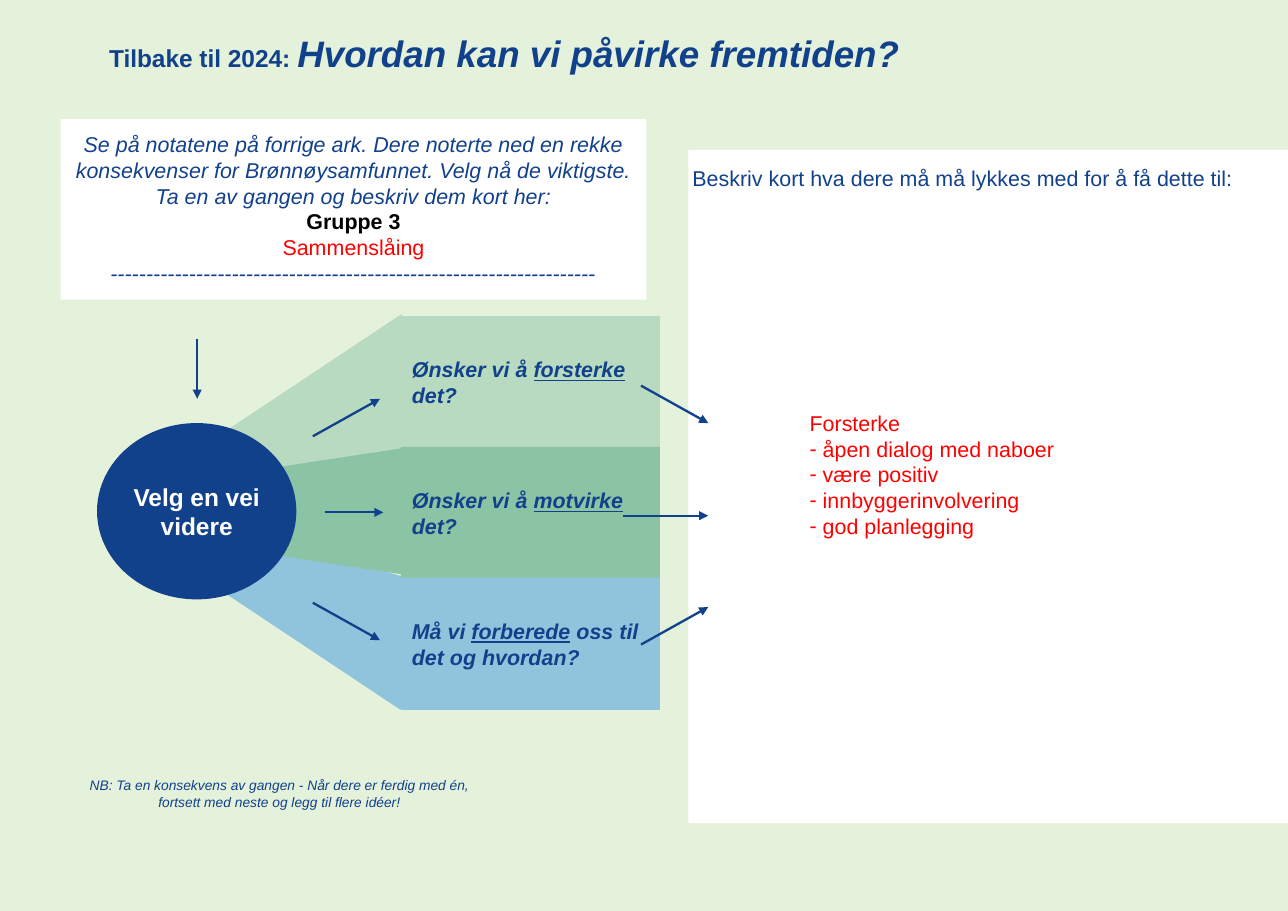
"""Build the slide on how the group can influence the future."""
import pptx
import pptx.chart
import pptx.dml.color
import pptx.enum.shapes
import pptx.enum.text
import pptx.util
from dataclasses import dataclass
from lxml import etree

Pt = pptx.util.Pt
SHAPE = pptx.enum.shapes.MSO_SHAPE
ALIGN = pptx.enum.text.PP_ALIGN
ANCHOR = pptx.enum.text.MSO_ANCHOR


@dataclass(frozen=True)
class Theme:
    font: str = "Arial"
    background: str = "E4F1DB"
    navy: str = "12418B"
    white: str = "FFFFFF"
    black: str = "000000"
    red: str = "FF0000"
    mint: str = "B8DAC0"
    green: str = "8BC3A5"
    blue: str = "90C4DD"
    note: int = 9
    body: int = 14
    label: int = 16
    title: int = 24
    line: float = 1.5


THEME = Theme()
PAGE = (841.9, 595.3)
TITLE = ("Tilbake til 2024: ", "Hvordan kan vi påvirke fremtiden?")
INTRO = [
    ("Se på notatene på forrige ark. Dere noterte ned en rekke konsekvenser for "
     "Brønnøysamfunnet. Velg nå de viktigste. Ta en av gangen og beskriv dem kort her:",
     dict(italic=True)),
    ("Gruppe 3", dict(color=THEME.black, bold=True)),
    ("Sammenslåing", dict(color=THEME.red)),
    ("-" * 68, dict(italic=True)),
]
HUB = "Velg en vei videre"
QUESTIONS = [
    (("Ønsker vi å ", "forsterke", " det?"), THEME.mint),
    (("Ønsker vi å ", "motvirke", " det?"), THEME.green),
    (("Må vi ", "forberede", " oss til det og hvordan?"), THEME.blue),
]
PROMPT = "Beskriv kort hva dere må må lykkes med for å få dette til:"
ANSWER = "Forsterke"
ANSWER_POINTS = ["åpen dialog med naboer", "være positiv", "innbyggerinvolvering", "god planlegging"]
NOTE = ["NB: Ta en konsekvens av gangen - Når dere er ferdig med én,",
        "fortsett med neste og legg til flere idéer!"]

PANEL = (450, 98, 391.9, 440)
HUB_BOX = (63.4, 276.5, 130.3, 115.2)
QUESTION_BOX = (262.1, 206.6, 169.2, 86.4)
QUESTION_STEP = 85.5
WEDGES = [
    ((175.7, 329, 85, 135.4), 294.9, THEME.blue),
    ((175.7, 204.5, 85.7, 136.8), 245.1, THEME.mint),
    ((160.6, 265.7, 85, 136.8), 270, THEME.green),
]
STRAIGHT_ARROWS = [(128.9, 221.8, 128.9, 260.6), (212.4, 334.8, 250.6, 334.8), (407.5, 337, 463, 337)]
ARROW_FANS = [(204.5, 248.4, 339.5, 54.4, 78.9), (419, 463, 336.6, 84.6, 60.1)]


def rgb(value):
    return pptx.dml.color.RGBColor.from_string(value)


def style(font, size=THEME.body, color=THEME.navy, bold=False, italic=False):
    font.name, font.size, font.bold, font.italic = THEME.font, Pt(size), bold, italic
    font.color.rgb = rgb(color)


def place(sp, box):
    sp.left, sp.top, sp.width, sp.height = map(Pt, box)


def frame(sp, inset, anchor=ANCHOR.TOP):
    tf = sp.text_frame
    tf.word_wrap, tf.vertical_anchor = True, anchor
    tf.auto_size = pptx.enum.text.MSO_AUTO_SIZE.NONE
    tf.margin_left = tf.margin_top = tf.margin_right = tf.margin_bottom = Pt(inset)
    return tf


def write(tf, lines, align=ALIGN.CENTER):
    for i, (runs, look) in enumerate(lines):
        p = tf.add_paragraph() if i else tf.paragraphs[0]
        p.alignment, p.space_before = align, Pt(0)
        style(p.font, **look)
        for j, text in enumerate([runs] if isinstance(runs, str) else runs):
            r = p.add_run()
            r.text = text
            if j == 1:
                r.font.underline = True


def shape(s, kind, box, color):
    sp = s.shapes.add_shape(kind, *map(Pt, box))
    sp.shadow.inherit = False
    sp.fill.solid()
    sp.fill.fore_color.rgb = rgb(color)
    sp.line.fill.background()
    return sp


def arrow(s, *ends):
    c = s.shapes.add_connector(pptx.enum.shapes.MSO_CONNECTOR.STRAIGHT, *map(Pt, ends))
    c.line.color.rgb, c.line.width = rgb(THEME.navy), Pt(THEME.line)
    ns = pptx.oxml.ns.qn
    etree.SubElement(c.line._get_or_add_ln(), ns("a:tailEnd"), type="triangle")
    etree.SubElement(c._element.spPr, ns("a:effectLst"))


def bullet(p, char, left=0, hang=0):
    pPr = p._p.get_or_add_pPr()
    pPr.set("marL", str(Pt(left)))
    pPr.set("indent", str(Pt(-hang)))
    mark = pptx.oxml.parse_xml(
        f'<a:bu{"Char" if char else "None"} {pptx.oxml.ns.nsdecls("a")}/>')
    if char:
        mark.set("char", char)
    pPr.insert_element_before(mark, "a:tabLst", "a:defRPr", "a:extLst")


def add_title(s):
    sp = s.shapes.title
    place(sp, (63.4, 12.2, 616.3, 45.4))
    p = frame(sp, 7.9).paragraphs[0]
    p.alignment = ALIGN.LEFT
    for text, size, italic in zip(TITLE, (THEME.label, THEME.title), (False, True)):
        r = p.add_run()
        r.text = text
        style(r.font, size, bold=True, italic=italic)


def add_answers(s):
    sp = s.placeholders[1]
    place(sp, PANEL)
    sp.fill.solid()
    sp.fill.fore_color.rgb = rgb(THEME.white)
    tf = frame(sp, 7.2, ANCHOR.MIDDLE)
    tf.margin_left, tf.margin_bottom = Pt(79.2), Pt(23.3)
    write(tf, [(text, dict(color=THEME.red)) for text in [ANSWER, *ANSWER_POINTS]], ALIGN.LEFT)
    bullet(tf.paragraphs[0], None)
    for p in tf.paragraphs[1:]:
        bullet(p, "-", 8.55, 8.55)


def add_paths(s):
    for box, angle, color in WEDGES:
        sp = shape(s, SHAPE.TRAPEZOID, box, color)
        sp.adjustments[0], sp.rotation = 0.244, angle
    sp = shape(s, SHAPE.OVAL, HUB_BOX, THEME.navy)
    write(frame(sp, 0, ANCHOR.MIDDLE), [(HUB, dict(size=THEME.label, color=THEME.white, bold=True))])
    left, top, width, height = QUESTION_BOX
    for i, (runs, color) in enumerate(QUESTIONS):
        sp = shape(s, SHAPE.RECTANGLE, (left, top + i * QUESTION_STEP, width, height), color)
        write(frame(sp, 7.2, ANCHOR.MIDDLE), [(runs, dict(bold=True, italic=True))], ALIGN.LEFT)


def add_arrows(s):
    for ends in STRAIGHT_ARROWS:
        arrow(s, *ends)
    for x1, x2, middle, start, end in ARROW_FANS:
        for side in (-1, 1):
            arrow(s, x1, middle + side * start, x2, middle + side * end)


def main():
    prs = pptx.Presentation()
    prs.slide_width, prs.slide_height = map(Pt, PAGE)
    s = prs.slides.add_slide(prs.slide_layouts[1])
    s.background.fill.solid()
    s.background.fill.fore_color.rgb = rgb(THEME.background)
    add_title(s)
    add_answers(s)
    add_paths(s)
    sp = s.shapes.add_textbox(*map(Pt, (433.5, 100.8, 391.7, 31.7)))
    write(frame(sp, 7.2), [(PROMPT, {})])
    add_arrows(s)
    sp = s.shapes.add_textbox(*map(Pt, (47.2, 499.7, 270.7, 38.2)))
    write(frame(sp, 7.9), [(text, dict(size=THEME.note, italic=True)) for text in NOTE])
    sp = shape(s, SHAPE.RECTANGLE, (39.6, 77.8, 383, 118.1), THEME.white)
    write(frame(sp, 7.9), INTRO)
    prs.save("out.pptx")


if __name__ == "__main__":
    main()
